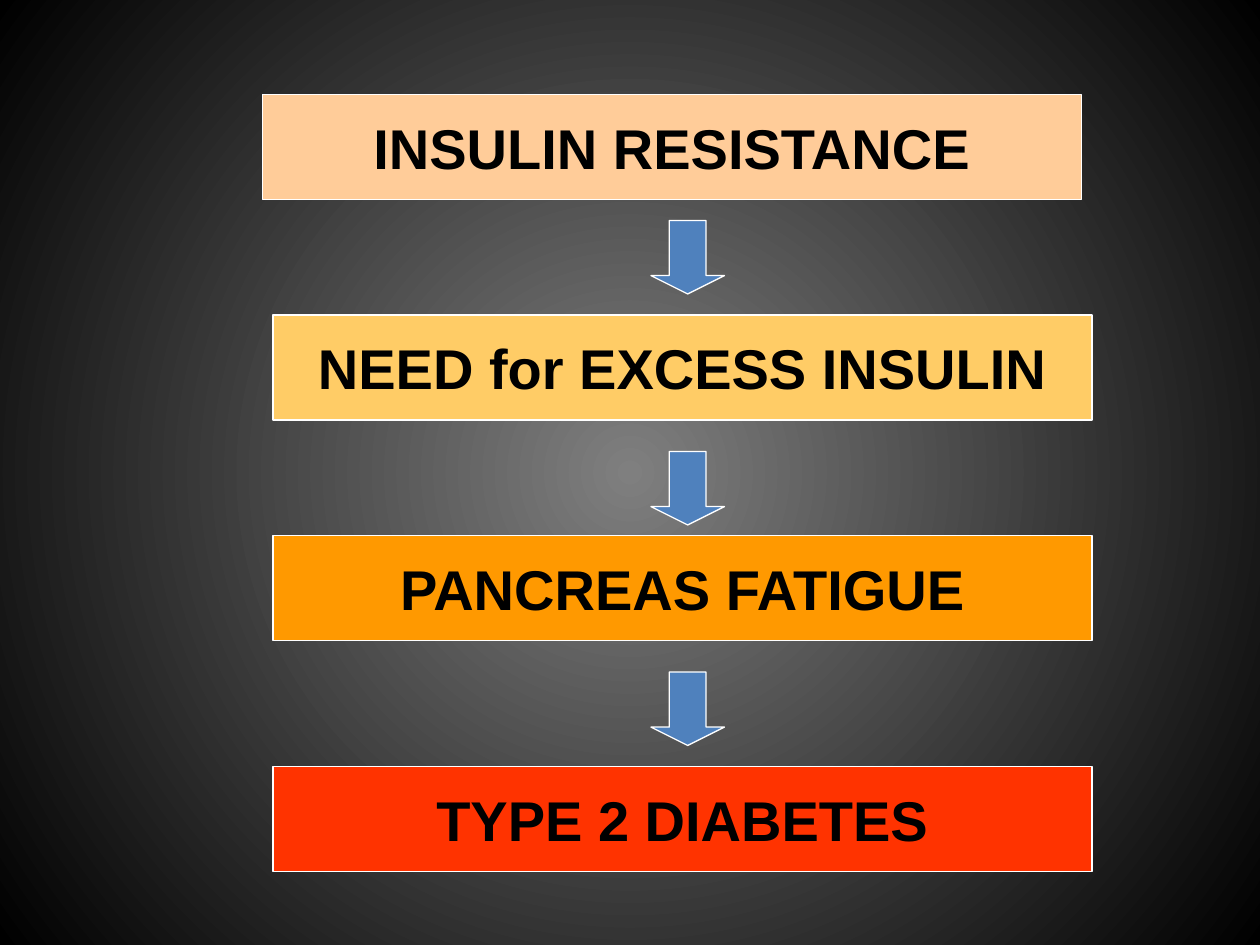
from lxml.etree import SubElement
from pptx import Presentation
from pptx.dml.color import RGBColor
from pptx.enum.shapes import MSO_SHAPE
from pptx.enum.text import MSO_ANCHOR, PP_ALIGN
from pptx.oxml.ns import qn
from pptx.util import Inches, Pt

UNIT = Inches(1) / 12  # grid step
COLORS = {
    "glow": "7F7F7F",
    "edge": "000000",
    "text": "000000",
    "outline": "FFFFFF",
    "arrow": "4F81BD",
    "resistance": "FFCC99",
    "need": "FFCC66",
    "fatigue": "FF9900",
    "diabetes": "FF3300",
}
FONT = {"name": "Arial", "size": Pt(32), "bold": True}
FRAME = {"word_wrap": False, "vertical_anchor": MSO_ANCHOR.MIDDLE}

BOX_SIZE = (78, 10)
ARROW_SIZE = (7, 7)
ARROW_COLUMN = 62
ARROW_ROWS = (21, 43, 64)
# label, fill, column, row
STAGES = (
    ("INSULIN RESISTANCE", "resistance", 25, 9),
    ("NEED for EXCESS INSULIN", "need", 26, 30),
    ("PANCREAS FATIGUE", "fatigue", 26, 51),
    ("TYPE 2 DIABETES", "diabetes", 26, 73),
)


def color(name):
    return RGBColor.from_string(COLORS[name])


def apply_format(target, values):
    for name, value in values.items():
        setattr(target, name, value)


def paint_background(slide):
    """Fill the background with a circular gradient from the centre out."""
    fill = slide.background.fill
    fill.gradient()
    for stop, name, position in zip(fill.gradient_stops, ("glow", "edge"), (0, 1)):
        stop.color.rgb = color(name)
        stop.position = position
    gradient = slide.element.find(".//" + qn("a:gradFill"))
    gradient.remove(gradient.find(qn("a:lin")))
    circle = SubElement(gradient, qn("a:path"), {"path": "circle"})
    SubElement(circle, qn("a:fillToRect"), dict.fromkeys("ltrb", "50000"))


def add_outlined_shape(slide, kind, column, row, size, fill):
    lengths = [round(cells * UNIT) for cells in (column, row, *size)]
    shape = slide.shapes.add_shape(kind, *lengths)
    shape.shadow.inherit = False
    shape.fill.solid()
    shape.fill.fore_color.rgb = color(fill)
    shape.line.color.rgb = color("outline")
    shape.line.width = Pt(0.75)
    return shape


def add_stage(slide, label, fill, column, row):
    shape = add_outlined_shape(slide, MSO_SHAPE.RECTANGLE, column, row, BOX_SIZE, fill)
    apply_format(shape.text_frame, FRAME)
    paragraph = shape.text_frame.paragraphs[0]
    paragraph.alignment = PP_ALIGN.CENTER
    run = paragraph.add_run()
    run.text = label
    apply_format(run.font, FONT)
    run.font.color.rgb = color("text")


def add_down_arrow(slide, row):
    arrow = add_outlined_shape(
        slide, MSO_SHAPE.DOWN_ARROW, ARROW_COLUMN, row, ARROW_SIZE, "arrow"
    )
    arrow.adjustments[0] = 0.5
    arrow.adjustments[1] = 0.25


def main():
    presentation = Presentation()
    presentation.slide_width = Inches(10)
    presentation.slide_height = Inches(7.5)
    slide = presentation.slides.add_slide(presentation.slide_layouts[6])
    paint_background(slide)
    for stage in STAGES:
        add_stage(slide, *stage)
    for row in ARROW_ROWS:
        add_down_arrow(slide, row)
    presentation.save("out.pptx")


if __name__ == "__main__":
    main()
